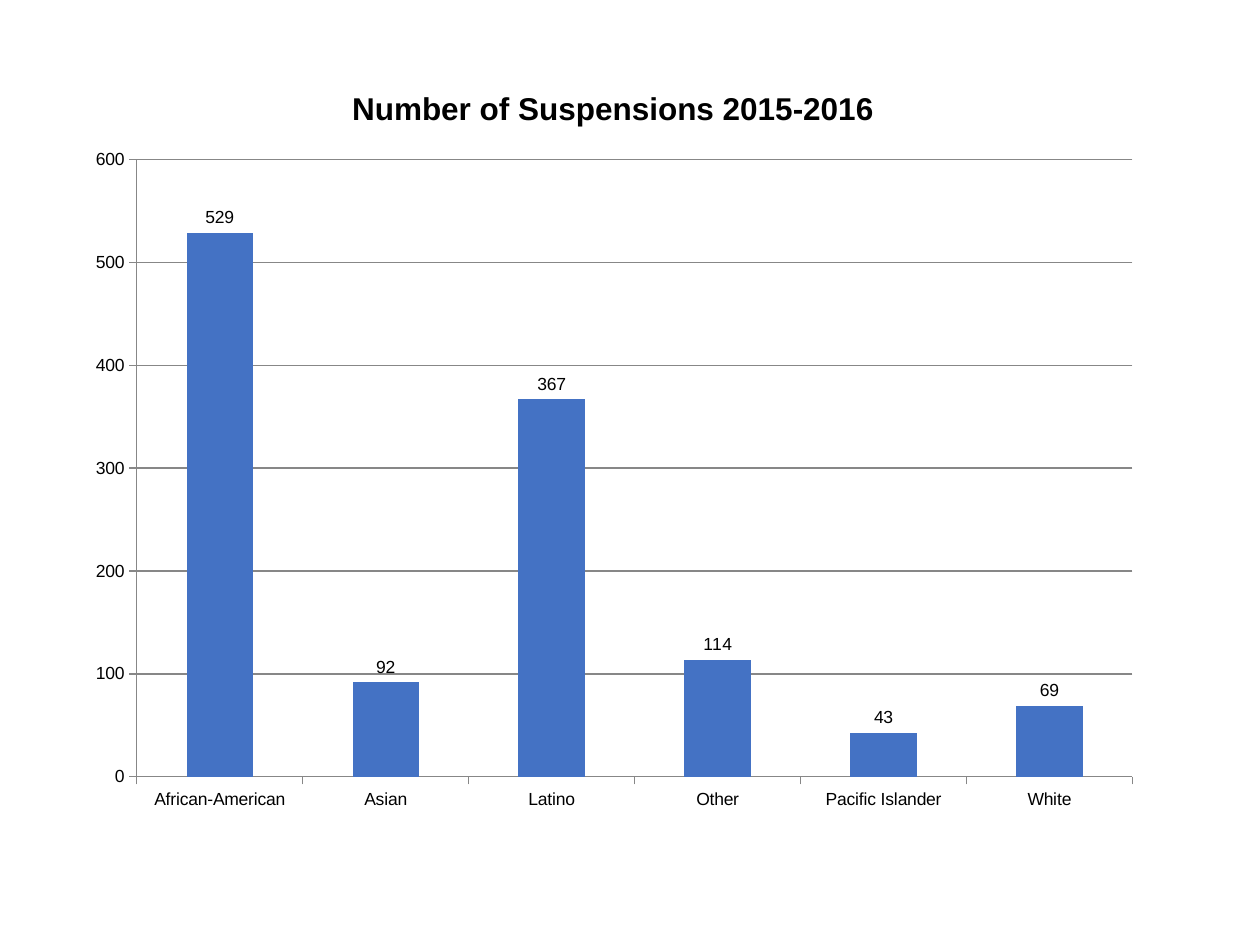
from lxml import etree
from pptx import Presentation
from pptx.chart.data import CategoryChartData
from pptx.dml.color import RGBColor
from pptx.enum.chart import XL_CHART_TYPE, XL_LABEL_POSITION, XL_TICK_MARK
from pptx.oxml.ns import qn
from pptx.util import Inches, Pt

COLUMNS = XL_CHART_TYPE.COLUMN_CLUSTERED
OUTSIDE_END = XL_LABEL_POSITION.OUTSIDE_END
TICK_OUTSIDE = XL_TICK_MARK.OUTSIDE

COLORS = {"background": "FFFFFF", "text": "000000", "bar": "4472C4", "line": "878787"}
BLANK_LAYOUT = 6

TITLE = "Number of Suspensions 2015-2016"
SUSPENSIONS = {
    "African-American": 529,
    "Asian": 92,
    "Latino": 367,
    "Other": 114,
    "Pacific Islander": 43,
    "White": 69,
}


class SlideBuilder:
    """Holds the style and the current slide."""

    font_name = "Arial"
    text_size = Pt(10)
    title_size = Pt(18)
    line_width = Pt(0.75)

    def __init__(self, slide):
        self.slide = slide
        fill = slide.background.fill
        fill.solid()
        fill.fore_color.rgb = self.color("background")

    def color(self, name):
        return RGBColor.from_string(COLORS[name])

    def style_font(self, font, size, bold=False):
        font.name = self.font_name
        font.size = size
        font.bold = bold
        font.color.rgb = self.color("text")

    def style_line(self, line):
        line.color.rgb = self.color("line")
        line.width = self.line_width

    def place_plot(self, chart, **fractions):
        """Fix the inner plot area, in fractions of the chart."""
        plot_area = chart.plots[0]._element.getparent()
        for old_layout in plot_area.findall(qn("c:layout")):
            plot_area.remove(old_layout)
        layout = etree.Element(qn("c:layout"))
        manual = etree.SubElement(layout, qn("c:manualLayout"))
        settings = {"layoutTarget": "inner", "xMode": "edge", "yMode": "edge", **fractions}
        for name, value in settings.items():
            etree.SubElement(manual, qn(f"c:{name}")).set("val", str(value))
        plot_area.insert(0, layout)

    def column_chart(self, title, values, left, top, width, height):
        data = CategoryChartData()
        data.categories = list(values)
        data.add_series(title, list(values.values()))
        chart = self.slide.shapes.add_chart(COLUMNS, left, top, width, height, data).chart
        self.style_font(chart.font, self.text_size)
        chart.has_legend = False

        # Title
        chart.has_title = True
        chart.chart_title.include_in_layout = False
        para = chart.chart_title.text_frame.paragraphs[0]
        para.text = title
        self.style_font(para.font, self.title_size, bold=True)

        # Axes and gridlines
        for axis in (chart.category_axis, chart.value_axis):
            axis.major_tick_mark = TICK_OUTSIDE
            self.style_line(axis.format.line)
        value_axis = chart.value_axis
        value_axis.minimum_scale = 0
        value_axis.maximum_scale = 600
        value_axis.major_unit = 100
        value_axis.has_major_gridlines = True
        self.style_line(value_axis.major_gridlines.format.line)

        # Bars and value labels
        plot = chart.plots[0]
        plot.gap_width = 150
        plot.vary_by_categories = False
        series = plot.series[0]
        series.format.fill.solid()
        series.format.fill.fore_color.rgb = self.color("bar")
        labels = series.data_labels
        labels.show_value = True
        labels.position = OUTSIDE_END
        self.style_font(labels.font, self.text_size)
        return chart


def main():
    deck = Presentation()
    deck.slide_width, deck.slide_height = Inches(10), Inches(7.5)
    builder = SlideBuilder(deck.slides.add_slide(deck.slide_layouts[BLANK_LAYOUT]))

    chart = builder.column_chart(
        TITLE, SUSPENSIONS, Inches(0.57), Inches(0.48), Inches(8.59), Inches(6.05)
    )
    builder.place_plot(chart, x=0.06, y=0.13, w=0.92, h=0.81)

    deck.save("out.pptx")


if __name__ == "__main__":
    main()
